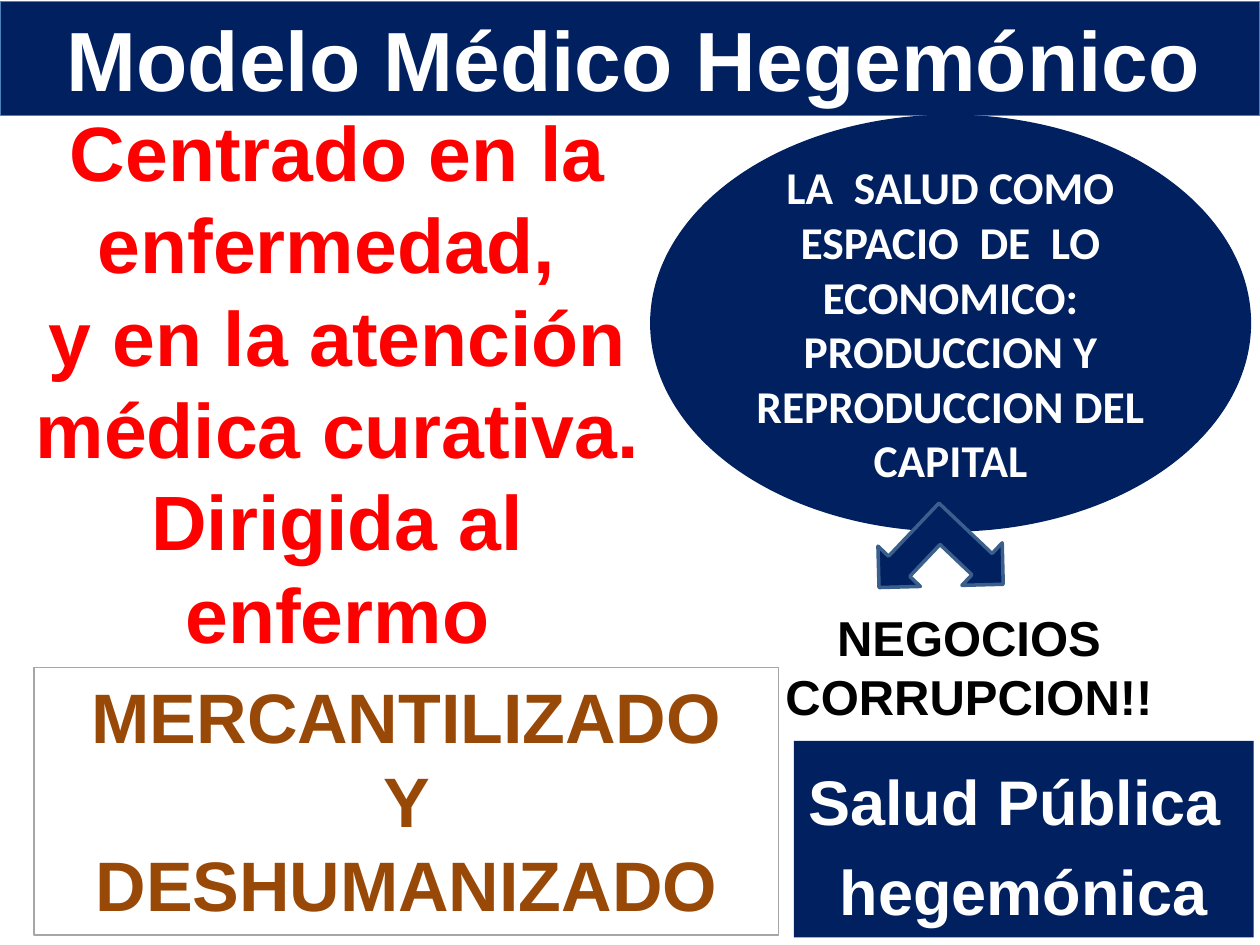
from pptx import Presentation
from pptx.dml.color import RGBColor
from pptx.enum.shapes import MSO_SHAPE
from pptx.enum.text import MSO_ANCHOR, MSO_AUTO_SIZE, PP_ALIGN
from pptx.util import Inches, Pt

RECTANGLE, ELLIPSE = MSO_SHAPE.RECTANGLE, MSO_SHAPE.OVAL
FORKED_ARROW = MSO_SHAPE.LEFT_UP_ARROW
TOP, MIDDLE = MSO_ANCHOR.TOP, MSO_ANCHOR.MIDDLE
CENTER = PP_ALIGN.CENTER

NAVY = RGBColor(0x00, 0x20, 0x60)
BLUE = RGBColor(0x4F, 0x81, 0xBD)
STEEL = RGBColor(0x3A, 0x5F, 0x8C)
GRAY = RGBColor(0xA6, 0xA6, 0xA6)
RED = RGBColor(0xFF, 0x00, 0x00)
BROWN = RGBColor(0x98, 0x48, 0x07)
BLACK = RGBColor(0x00, 0x00, 0x00)
WHITE = RGBColor(0xFF, 0xFF, 0xFF)

presentation = Presentation()
presentation.slide_width = Inches(10)
presentation.slide_height = Inches(7.5)
WIDTH, HEIGHT = presentation.slide_width, presentation.slide_height
slide = presentation.slides.add_slide(presentation.slide_layouts[5])


def paint(shape, fill, line=None, line_width=0.75):
    if fill is None:
        shape.fill.background()
    else:
        shape.fill.solid()
        shape.fill.fore_color.rgb = fill
    if line is None:
        shape.line.fill.background()
    else:
        shape.line.color.rgb = line
        shape.line.width = Pt(line_width)


def write(shape, lines, size, color, font="Arial", anchor=TOP, wrap=True,
          spacing=None, margin=0, indent=0):
    """Fill the shape with bold centred paragraphs; margin and indent in inches."""
    frame = shape.text_frame
    frame.auto_size = MSO_AUTO_SIZE.NONE
    frame.word_wrap = wrap
    frame.vertical_anchor = anchor
    for number, line in enumerate(lines):
        paragraph = frame.add_paragraph() if number else frame.paragraphs[0]
        paragraph.alignment = CENTER
        if spacing:
            paragraph.line_spacing = spacing
        if margin:
            properties = paragraph._p.get_or_add_pPr()
            properties.set("marL", str(Inches(margin)))
            properties.set("indent", str(Inches(indent)))
        run = paragraph.add_run()
        run.text = line
        run.font.name = font
        run.font.size = Pt(size)
        run.font.bold = True
        run.font.color.rgb = color


# Title band across the full width
title = slide.shapes.title
title.left, title.top = 0, Inches(0.01)
title.width, title.height = WIDTH, Inches(0.91)
paint(title, NAVY, BLUE)
write(title, ["Modelo Médico Hegemónico"], 48, WHITE, margin=0.81, indent=-0.75)

# Remaining objects, from back to front: place, shape kind, paint, text
TEXT_BOX = None
objects = [
    ((0.08, 0.78, 5.2, 4.54), TEXT_BOX, (None,),
     dict(lines=["Centrado en la enfermedad, ",
                 "y en la atención médica curativa. Dirigida al enfermo"],
          size=44, color=RED)),
    ((5.16, 0.91, 4.77, 3.31), ELLIPSE, (NAVY,),
     dict(lines=["LA  SALUD COMO ESPACIO  DE  LO ECONOMICO: "
                 "PRODUCCION Y REPRODUCCION DEL CAPITAL"],
          size=26, color=WHITE, font="Calibri", anchor=MIDDLE)),
    ((7, 4.02, 0.93, 0.93), FORKED_ARROW, (NAVY, STEEL, 2), None),
    ((6.05, 4.77, 3.28, 1.04), TEXT_BOX, (None,),
     dict(lines=["NEGOCIOS", "CORRUPCION!!"], size=28, color=BLACK)),
    ((0.27, 5.3, 5.91, 2.12), RECTANGLE, (None, GRAY),
     dict(lines=["MERCANTILIZADO", "Y", "DESHUMANIZADO"], size=40, color=BROWN)),
    ((6.3, 5.88, 3.65, 1.56), RECTANGLE, (NAVY,),
     dict(lines=["Salud Pública ", "hegemónica"], size=36, color=WHITE,
          wrap=False, spacing=1.2, margin=0.38, indent=-0.38)),
]
for (left, top, width, height), kind, colors, text in objects:
    place = (int(WIDTH * left / 10), int(HEIGHT * top / 7.5),
             int(WIDTH * width / 10), int(HEIGHT * height / 7.5))
    if kind is TEXT_BOX:
        shape = slide.shapes.add_textbox(*place)
    else:
        shape = slide.shapes.add_shape(kind, *place)
        shape.shadow.inherit = False
    if kind == FORKED_ARROW:
        shape.rotation = 223.5
    paint(shape, *colors)
    if text:
        write(shape, **text)

presentation.save("out.pptx")
